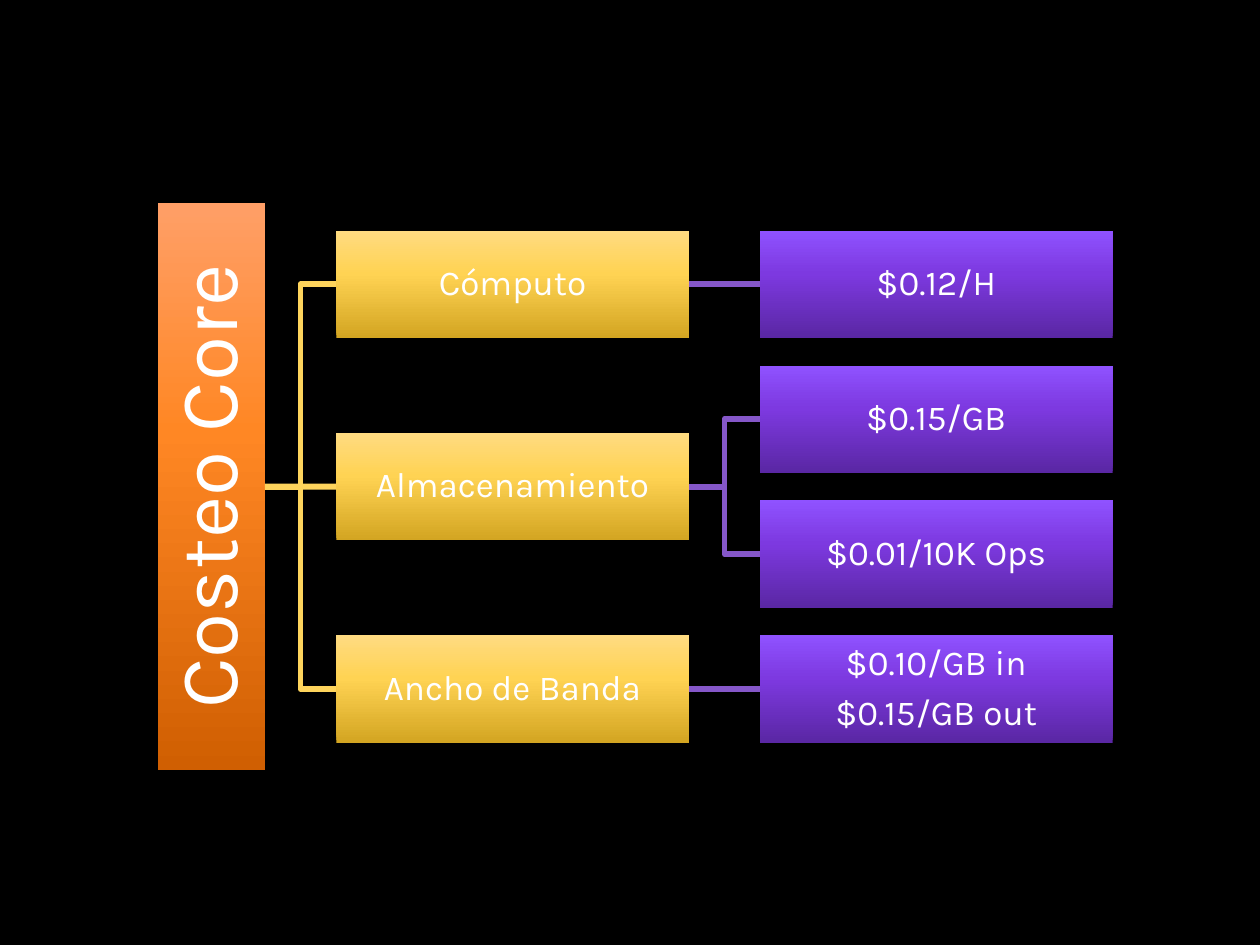
"""Build the Costeo Core slide: a cost tree from root to branches to prices."""
import copy

import pptx
import pptx.dml.color
import pptx.enum.shapes
import pptx.enum.text
import pptx.oxml
import pptx.oxml.ns
import pptx.util

Cm = pptx.util.Cm
ORANGE = ["D05F02", "FF8724", "FF9F67"]
YELLOW = ["D3A522", "FFD353", "FFDB81"]
PURPLE = ["5A27A4", "7D39E0", "8F52FF"]
YELLOW_LINE, PURPLE_LINE = "FED45C", "8557C9"
BOX_WIDTH, BOX_HEIGHT = 7.11, 2.16
BRANCH_LEFT, PRICE_LEFT = 6.78, 15.32
FIRST_TOP, ROW_STEP = 4.65, 2.72

tree = [
    ("Cómputo", 0, [(0, ["$0.12/H"])]),
    ("Almacenamiento", 1.5, [(1, ["$0.15/GB"]), (2, ["$0.01/10K Ops"])]),
    ("Ancho de Banda", 3, [(3, ["$0.10/GB in", "$0.15/GB out"])]),
]


def rgb(value):
    return pptx.dml.color.RGBColor.from_string(value)


def add_box(left, top, width, height, lines, colors, size):
    box = slide.shapes.add_shape(
        pptx.enum.shapes.MSO_SHAPE.RECTANGLE, Cm(left), Cm(top), Cm(width), Cm(height))
    box.shadow.inherit = False
    box.line.fill.background()
    box.fill.gradient()
    box.fill.gradient_angle = 90
    stops = box._element.spPr.find(".//" + pptx.oxml.ns.qn("a:gsLst"))
    stops.insert(1, copy.deepcopy(stops[0]))
    for stop, position, color in zip(box.fill.gradient_stops, [0, 0.6, 1], colors):
        stop.position = position
        stop.color.rgb = rgb(color)
    frame = box.text_frame
    frame.word_wrap = True
    frame.vertical_anchor = pptx.enum.text.MSO_ANCHOR.MIDDLE
    frame.margin_left = frame.margin_right = Cm(0.03)
    frame.margin_top = frame.margin_bottom = Cm(0.03)
    for index, line in enumerate(lines):
        paragraph = frame.add_paragraph() if index else frame.paragraphs[0]
        paragraph.alignment = pptx.enum.text.PP_ALIGN.CENTER
        paragraph.line_spacing = 0.9
        paragraph.space_after = pptx.util.Pt(size * 0.35)
        run = paragraph.add_run()
        run.text = line
        run.font.name = "Karla"
        run.font.size = pptx.util.Pt(size)
        run.font.color.rgb = rgb("FFFFFF")
    return box


presentation = pptx.Presentation()
presentation.slide_width, presentation.slide_height = Cm(25.4), Cm(19.05)
slide = presentation.slides.add_slide(presentation.slide_layouts[6])
slide.background.fill.solid()
slide.background.fill.fore_color.rgb = rgb("000000")

root = add_box(3.18, 4.1, BOX_HEIGHT, 11.42, ["Costeo Core"], ORANGE, 47)
root.text_frame._txBody.bodyPr.set("vert", "vert270")

links = []
for name, branch_row, prices in tree:
    branch = add_box(BRANCH_LEFT, FIRST_TOP + branch_row * ROW_STEP,
                     BOX_WIDTH, BOX_HEIGHT, [name], YELLOW, 20)
    links.append((root, branch, YELLOW_LINE, branch_row == 1.5))
    for price_row, lines in prices:
        price = add_box(PRICE_LEFT, FIRST_TOP + price_row * ROW_STEP,
                        BOX_WIDTH, BOX_HEIGHT, lines, PURPLE, 20)
        links.append((branch, price, PURPLE_LINE, price_row == branch_row))

for parent, child, color, straight in links:
    kinds = pptx.enum.shapes.MSO_CONNECTOR
    link = slide.shapes.add_connector(
        kinds.STRAIGHT if straight else kinds.ELBOW,
        parent.left + parent.width, parent.top + parent.height // 2,
        child.left, child.top + child.height // 2)
    link.begin_connect(parent, 3)
    link.end_connect(child, 1)
    link.line.color.rgb = rgb(color)
    link.line.width = pptx.util.Pt(3.35)
    link._element.spPr.append(pptx.oxml.parse_xml(
        "<a:effectLst %s/>" % pptx.oxml.ns.nsdecls("a")))

presentation.save("out.pptx")
